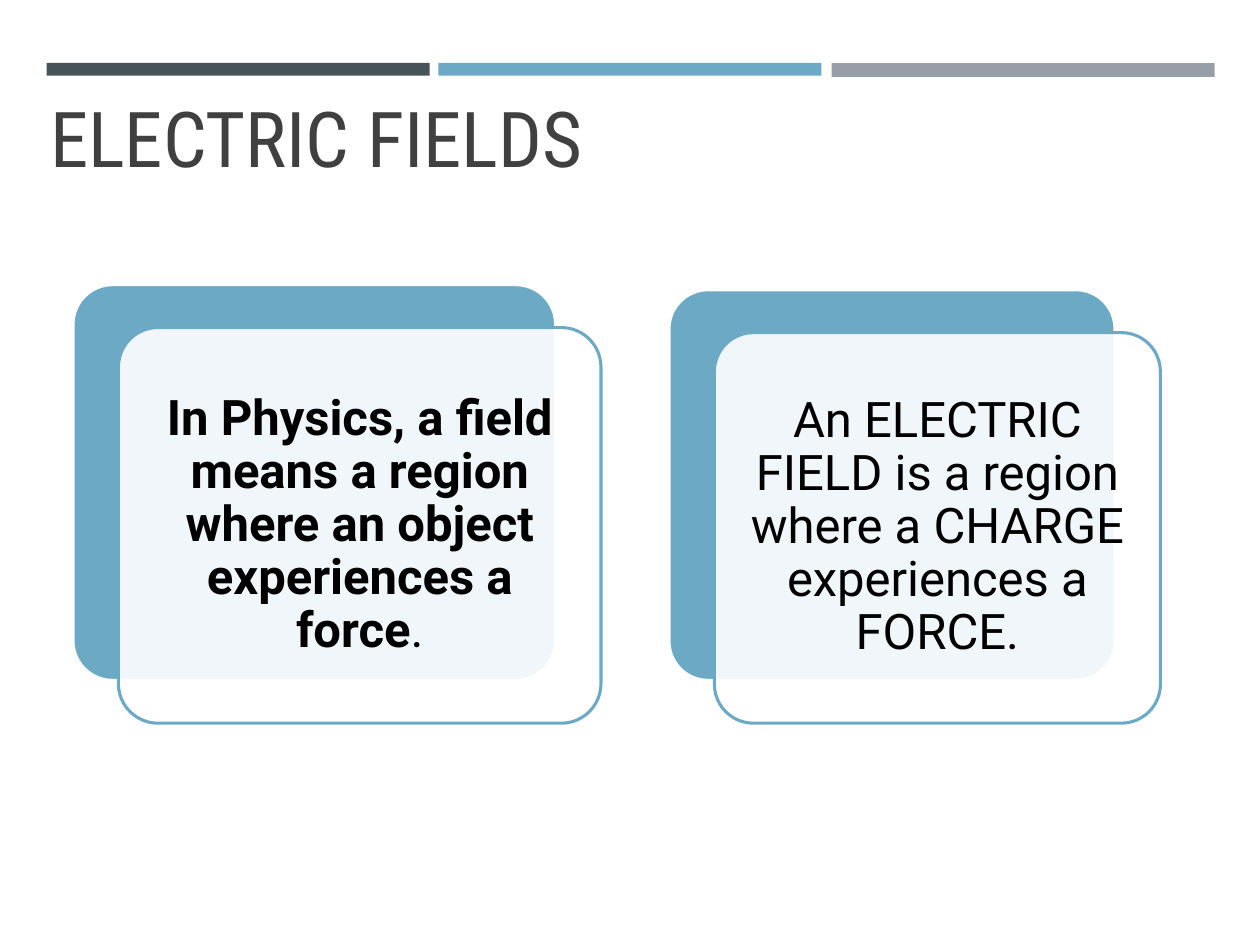
from lxml import etree
from pptx import Presentation
from pptx.dml.color import RGBColor
from pptx.enum import shapes, text
from pptx.oxml.ns import qn
from pptx.util import Inches, Pt

SLATE = RGBColor(0x46, 0x53, 0x59)
BLUE = RGBColor(0x6B, 0xA9, 0xC5)
GRAY = RGBColor(0x96, 0x9F, 0xA7)
WHITE = RGBColor(0xFF, 0xFF, 0xFF)
BLACK = RGBColor(0x00, 0x00, 0x00)
TITLE_GRAY = RGBColor(0x40, 0x40, 0x40)
SHAPE = shapes.MSO_SHAPE


def add_bar(s, left, height, color):
    sp = s.shapes.add_shape(SHAPE.RECTANGLE, Inches(left), Inches(0.5),
                            Inches(3.04), Inches(height))
    sp.shadow.inherit = False
    sp.fill.solid()
    sp.fill.fore_color.rgb = color
    sp.line.fill.background()


def add_panel(s, left, top, width, height, fill, line, opacity=100):
    sp = s.shapes.add_shape(SHAPE.ROUNDED_RECTANGLE, Inches(left), Inches(top),
                            Inches(width), Inches(height))
    sp.adjustments[0] = 0.1
    sp.shadow.inherit = False
    sp.fill.solid()
    sp.fill.fore_color.rgb = fill
    sp.line.color.rgb = line
    sp.line.width = Pt(1.75)
    if opacity < 100:
        color = sp.fill._xPr.find(qn("a:solidFill"))[0]
        etree.SubElement(color, qn("a:alpha")).set("val", str(opacity * 1000))


def add_text(s, left, top, width, height, runs, font, size, color,
             anchor, align, inset=None):
    sp = s.shapes.add_textbox(Inches(left), Inches(top), Inches(width), Inches(height))
    tf = sp.text_frame
    tf.word_wrap = True
    tf.vertical_anchor = anchor
    if inset is not None:
        tf.margin_left = tf.margin_right = Inches(inset)
        tf.margin_top = tf.margin_bottom = Inches(inset)
    p = tf.paragraphs[0]
    p.alignment = align
    p.line_spacing = 0.9
    for wording, bold in runs:
        r = p.add_run()
        r.text = wording
        r.font.name = font
        r.font.size = Pt(size)
        r.font.bold = bold
        r.font.color.rgb = color


def add_card(s, left, top, width, height, runs):
    add_panel(s, left, top, width, height, BLUE, WHITE)
    front_left, front_top = left + 0.36, top + 0.34
    add_panel(s, front_left, front_top, width, height, WHITE, BLUE, opacity=90)
    pad = 0.09
    add_text(s, front_left + pad, front_top + pad, width - 2 * pad, height - 2 * pad,
             runs, "Roboto", 28, BLACK, text.MSO_ANCHOR.MIDDLE,
             text.PP_ALIGN.CENTER, inset=0.12)


def main():
    prs = Presentation()
    prs.slide_width, prs.slide_height = Inches(10), Inches(7.5)
    s = prs.slides.add_slide(prs.slide_layouts[6])

    add_bar(s, 0.37, 0.1, SLATE)
    add_bar(s, 3.48, 0.1, BLUE)
    add_bar(s, 6.6, 0.11, GRAY)
    add_text(s, 0.3, 0.21, 12.06, 1.3, [("ELECTRIC FIELDS", False)],
             "Roboto Condensed", 44, TITLE_GRAY, text.MSO_ANCHOR.BOTTOM,
             text.PP_ALIGN.LEFT)
    add_card(s, 0.58, 2.26, 3.83, 3.14, [
        ("In Physics, a field means a region where an object experiences a force", True),
        (".", False)])
    add_card(s, 5.31, 2.3, 3.54, 3.1, [
        ("An ELECTRIC FIELD is a region where a CHARGE experiences a FORCE.", False)])

    prs.save("out.pptx")


if __name__ == "__main__":
    main()
